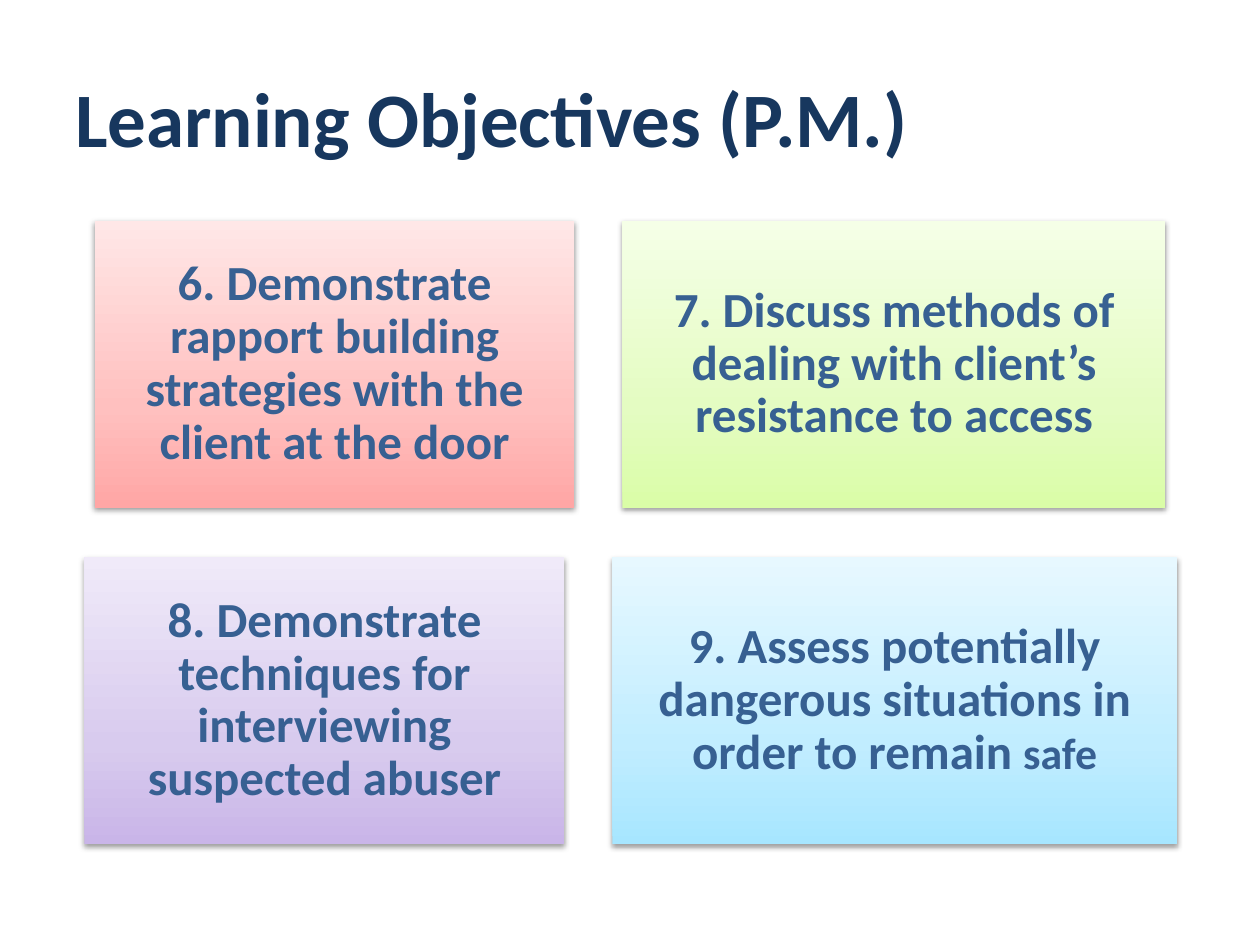
"""Build the afternoon learning objectives slide with four gradient cards."""
from dataclasses import dataclass

from lxml import etree
from pptx import Presentation
from pptx import util as u
from pptx.dml.color import RGBColor
from pptx.enum import shapes, text
from pptx.oxml.ns import qn

PX = 9144
FONT = "Calibri"
CARD_HEIGHT, CARD_GAP, CARD_INSET = 228, 38, 12
COLORS = {
    "title": "17375E",
    "body": "376092",
    "shadow": "000000",
    "red": ("FFA6A5", "FFC0BF", "FFE7E7"),
    "green": ("DAFDA7", "E4FCC2", "F5FFE7"),
    "purple": ("C9B5E8", "D8CBEE", "F0EAF9"),
    "blue": ("A7E6FF", "C1EDFF", "E7F8FF"),
}


@dataclass(frozen=True)
class Card:
    width: int
    color: str
    wording: str
    small_ending: str = ""


@dataclass(frozen=True)
class CardRow:
    left: int
    top: int
    cards: tuple[Card, ...]


ROWS = (
    CardRow(75, 175, (
        Card(381, "red", "6. Demonstrate rapport building strategies with the client at the door"),
        Card(431, "green", "7. Discuss methods of dealing with client’s resistance to access"),
    )),
    CardRow(67, 442, (
        Card(381, "purple", "8. Demonstrate techniques for interviewing suspected abuser"),
        Card(448, "blue", "9. Assess potentially dangerous situations in order to remain ", "safe"),
    )),
)


def px(length: int) -> u.Emu:
    """Turn px into EMU."""
    return u.Emu(length * PX)


def format_run(run, size: int, color: str) -> None:
    """Give a run its bold font, size and colour."""
    run.font.name = FONT
    run.font.size = u.Pt(size)
    run.font.bold = True
    run.font.color.rgb = RGBColor.from_string(COLORS[color])


def add_color(parent, color: str):
    """Append a colour element and return it."""
    return etree.SubElement(parent, qn("a:srgbClr"), val=color)


def fill_gradient(shape, color: str) -> None:
    """Fill a shape with three stops running from bottom to top."""
    shape.fill.gradient()
    shape.fill.gradient_angle = 90
    stops = shape._element.spPr.find(".//" + qn("a:gsLst"))
    for stop in list(stops):
        stops.remove(stop)
    for position, stop_color in zip((0, 35, 100), COLORS[color]):
        stop = etree.SubElement(stops, qn("a:gs"), pos=str(position * 1000))
        add_color(stop, stop_color)


def add_shadow(shape) -> None:
    """Give a shape a soft shadow below it."""
    shape.shadow.inherit = False
    effects = shape._element.spPr.find(qn("a:effectLst"))
    shadow = etree.SubElement(effects, qn("a:outerShdw"), blurRad="40000",
                              dist="20000", dir="5400000", rotWithShape="0")
    etree.SubElement(add_color(shadow, COLORS["shadow"]), qn("a:alpha"), val="38000")


def add_title(slide, wording: str) -> None:
    """Draw the slide title."""
    shape = slide.shapes.add_textbox(px(50), px(30), px(900), px(125))
    frame = shape.text_frame
    frame.word_wrap = True
    frame.vertical_anchor = text.MSO_ANCHOR.MIDDLE
    frame.text = wording
    format_run(frame.paragraphs[0].runs[0], 44, "title")


def add_card(slide, card: Card, left: int, top: int) -> None:
    """Draw one objective card."""
    shape = slide.shapes.add_shape(shapes.MSO_SHAPE.RECTANGLE, px(left), px(top),
                                   px(card.width), px(CARD_HEIGHT))
    fill_gradient(shape, card.color)
    shape.line.fill.background()
    add_shadow(shape)
    frame = shape.text_frame
    frame.word_wrap = True
    frame.vertical_anchor = text.MSO_ANCHOR.MIDDLE
    frame.margin_left = frame.margin_right = px(CARD_INSET)
    frame.margin_top = frame.margin_bottom = px(CARD_INSET)
    frame.text = card.wording
    paragraph = frame.paragraphs[0]
    paragraph.alignment = text.PP_ALIGN.CENTER
    paragraph.line_spacing = 0.9
    format_run(paragraph.runs[0], 28, "body")
    if card.small_ending:
        ending = paragraph.add_run()
        ending.text = card.small_ending
        format_run(ending, 25, "body")


def main() -> None:
    """Build and save the presentation."""
    presentation = Presentation()
    presentation.slide_width, presentation.slide_height = px(1000), px(750)
    slide = presentation.slides.add_slide(presentation.slide_layouts[6])
    add_title(slide, "Learning Objectives (P.M.)")
    for row in ROWS:
        left = row.left
        for card in row.cards:
            add_card(slide, card, left, row.top)
            left += card.width + CARD_GAP
    presentation.save("out.pptx")


if __name__ == "__main__":
    main()
